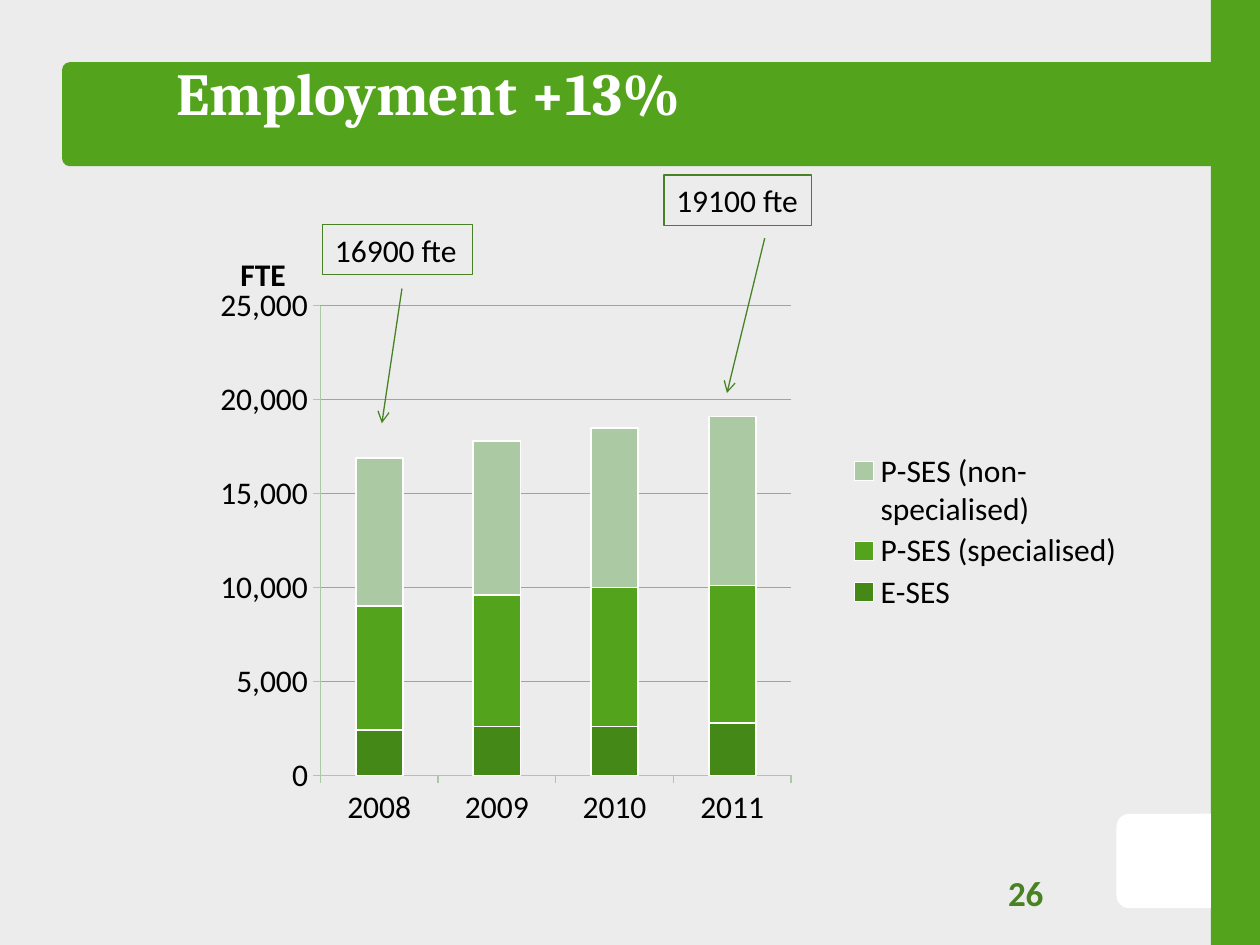
from pptx import Presentation
from pptx.chart.data import CategoryChartData
from pptx.dml.color import RGBColor
from pptx.enum.chart import XL_CHART_TYPE, XL_LEGEND_POSITION, XL_TICK_MARK
from pptx.enum.shapes import MSO_CONNECTOR, MSO_SHAPE
from pptx.enum.text import MSO_ANCHOR, MSO_AUTO_SIZE, PP_ALIGN
from pptx.oxml import parse_xml
from pptx.oxml.ns import nsdecls, qn
from pptx.util import Pt

STACKED, LEGEND_RIGHT = XL_CHART_TYPE.COLUMN_STACKED, XL_LEGEND_POSITION.RIGHT
TICK_OUT = XL_TICK_MARK.OUTSIDE
RECT, ROUND_RECT = MSO_SHAPE.RECTANGLE, MSO_SHAPE.ROUNDED_RECTANGLE
ROUND_TOP = MSO_SHAPE.ROUND_2_SAME_RECTANGLE
STRAIGHT = MSO_CONNECTOR.STRAIGHT
TOP, MIDDLE = MSO_ANCHOR.TOP, MSO_ANCHOR.MIDDLE
NO_FIT, LEFT = MSO_AUTO_SIZE.NONE, PP_ALIGN.LEFT

GRAY = RGBColor(0xEC, 0xEC, 0xEC)
GREEN = RGBColor(0x53, 0xA3, 0x1D)
DARK_GREEN = RGBColor(0x44, 0x88, 0x18)
PALE_GREEN = RGBColor(0xAB, 0xCA, 0xA4)
LINE_GREEN = RGBColor(0x48, 0x82, 0x25)
GRID = RGBColor(0x9A, 0xA8, 0x94)
WHITE = RGBColor(0xFF, 0xFF, 0xFF)
BLACK = RGBColor(0, 0, 0)


def set_font(font, color, **values):
    font.color.rgb = color
    for name, value in values.items():
        setattr(font, name, value)


def set_layout(element, index, target="", **fractions):
    """Place a chart part by fractions of the chart area."""
    old = element.find(qn("c:layout"))
    if old is not None:
        element.remove(old)
    inner = f'<c:layoutTarget val="{target}"/>' if target else ""
    inner += '<c:xMode val="edge"/><c:yMode val="edge"/>'
    inner += "".join(f'<c:{k} val="{v}"/>' for k, v in fractions.items())
    element.insert(index, parse_xml(
        f'<c:layout {nsdecls("c")}><c:manualLayout>{inner}</c:manualLayout></c:layout>'))


prs = Presentation()
prs.slide_width, prs.slide_height = Pt(720), Pt(540)
s = prs.slides.add_slide(prs.slide_layouts[5])
s.background.fill.solid()
s.background.fill.fore_color.rgb = GRAY

# Side bar, page tab and title band
for kind, box, color, rotation, adjustments in [
    (RECT, (692, 0, 28, 540), GREEN, 0, []),
    (ROUND_TOP, (638, 465, 54, 54), WHITE, 270, [0.136, 0]),
    (ROUND_RECT, (35.5, 35.5, 676, 59.5), GREEN, 0, [0.075]),
]:
    sp = s.shapes.add_shape(kind, *map(Pt, box))
    sp.shadow.inherit = False
    sp.fill.solid()
    sp.fill.fore_color.rgb = color
    sp.line.fill.background()
    sp.rotation = rotation
    for i, value in enumerate(adjustments):
        sp.adjustments[i] = value

# Title, in front of the band
title = s.shapes.title
s.shapes._spTree.append(title._element)
title.left, title.top, title.width, title.height = map(Pt, (93.5, 26, 459.5, 65))
tf = title.text_frame
tf.text = "Employment +13%"
for name, value in {"margin_left": Pt(7.2), "margin_right": Pt(7.2), "margin_top": Pt(5.8),
                    "margin_bottom": Pt(3.6), "vertical_anchor": TOP,
                    "auto_size": NO_FIT, "word_wrap": True}.items():
    setattr(tf, name, value)
p = tf.paragraphs[0]
p.alignment = LEFT
set_font(p.runs[0].font, WHITE, name="Cambria", size=Pt(34), bold=True)

# Page number
tf = s.shapes.add_textbox(Pt(576), Pt(492), Pt(120), Pt(36)).text_frame
tf.margin_left = tf.margin_right = tf.margin_top = tf.margin_bottom = 0
tf.vertical_anchor, tf.word_wrap = MIDDLE, True
r = tf.paragraphs[0].add_run()
r.text = "26"
set_font(r.font, LINE_GREEN, name="Calibri", size=Pt(20), bold=True)

# Stacked columns
data = CategoryChartData(number_format="#,##0")
data.categories = ["2008", "2009", "2010", "2011"]
data.add_series("E-SES", (2400, 2600, 2600, 2800))
data.add_series("P-SES (specialised)", (6600, 7000, 7400, 7300))
data.add_series("P-SES (non-specialised)", (7900, 8200, 8500, 9000))
chart = s.shapes.add_chart(STACKED, Pt(93.6), Pt(122.4), Pt(555.8), Pt(362.9), data).chart
chart.has_title = False
set_font(chart.font, BLACK, name="Calibri", size=Pt(18))
plot = chart.plots[0]
plot.gap_width, plot.overlap, plot.vary_by_categories = 150, 100, False
for series, color in zip(plot.series, (DARK_GREEN, GREEN, PALE_GREEN)):
    series.format.fill.solid()
    series.format.fill.fore_color.rgb = color
    series.format.line.color.rgb = WHITE
    series.format.line.width = Pt(1)
set_layout(chart._chartSpace.chart.plotArea, 0, "inner", x=0.161, y=0.144, w=0.484, h=0.74)

# Axes
axis = chart.value_axis
for ax in (chart.category_axis, axis):
    ax.major_tick_mark = TICK_OUT
    ax.format.line.color.rgb = PALE_GREEN
    ax.format.line.width = Pt(0.75)
axis.minimum_scale, axis.maximum_scale, axis.major_unit = 0, 25000, 5000
axis.tick_labels.number_format = "#,##0"
axis.tick_labels.number_format_is_linked = False
axis.has_major_gridlines = True
axis.major_gridlines.format.line.color.rgb = GRID
axis.major_gridlines.format.line.width = Pt(0.75)
tf = axis.axis_title.text_frame
tf.text = "FTE"
set_font(tf.paragraphs[0].runs[0].font, BLACK, name="Calibri", size=Pt(18), bold=True)
body = tf._txBody.bodyPr
body.set("rot", "0")
body.set("vert", "horz")
set_layout(axis.axis_title._element, 1, x=0.073, y=0.052)

# Legend
chart.has_legend = True
legend = chart.legend
legend.position, legend.include_in_layout = LEGEND_RIGHT, False
set_font(legend.font, BLACK, name="Calibri", size=Pt(18))
set_layout(legend._element, 1, x=0.7, y=0.37, w=0.29, h=0.26)

# Totals with arrows to their columns
for text, box, start, end in [
    ("16900 fte", (184.3, 128.2, 85.7, 28.8), (229.7, 164.9), (218.2, 241.9)),
    ("19100 fte", (379.4, 100.1, 84.2, 28.8), (437, 136.1), (415.4, 224.6)),
]:
    sp = s.shapes.add_textbox(*map(Pt, box))
    sp.line.color.rgb = LINE_GREEN
    sp.line.width = Pt(0.75)
    sp.text_frame.word_wrap = False
    r = sp.text_frame.paragraphs[0].add_run()
    r.text = text
    set_font(r.font, BLACK, name="Calibri", size=Pt(18))

    arrow = s.shapes.add_connector(STRAIGHT, *map(Pt, start + end))
    arrow.line.color.rgb = LINE_GREEN
    arrow.line.width = Pt(0.75)
    arrow.line._get_or_add_ln().append(parse_xml(f'<a:tailEnd {nsdecls("a")} type="arrow"/>'))
    arrow._element.spPr.append(parse_xml(f'<a:effectLst {nsdecls("a")}/>'))

prs.save("out.pptx")
